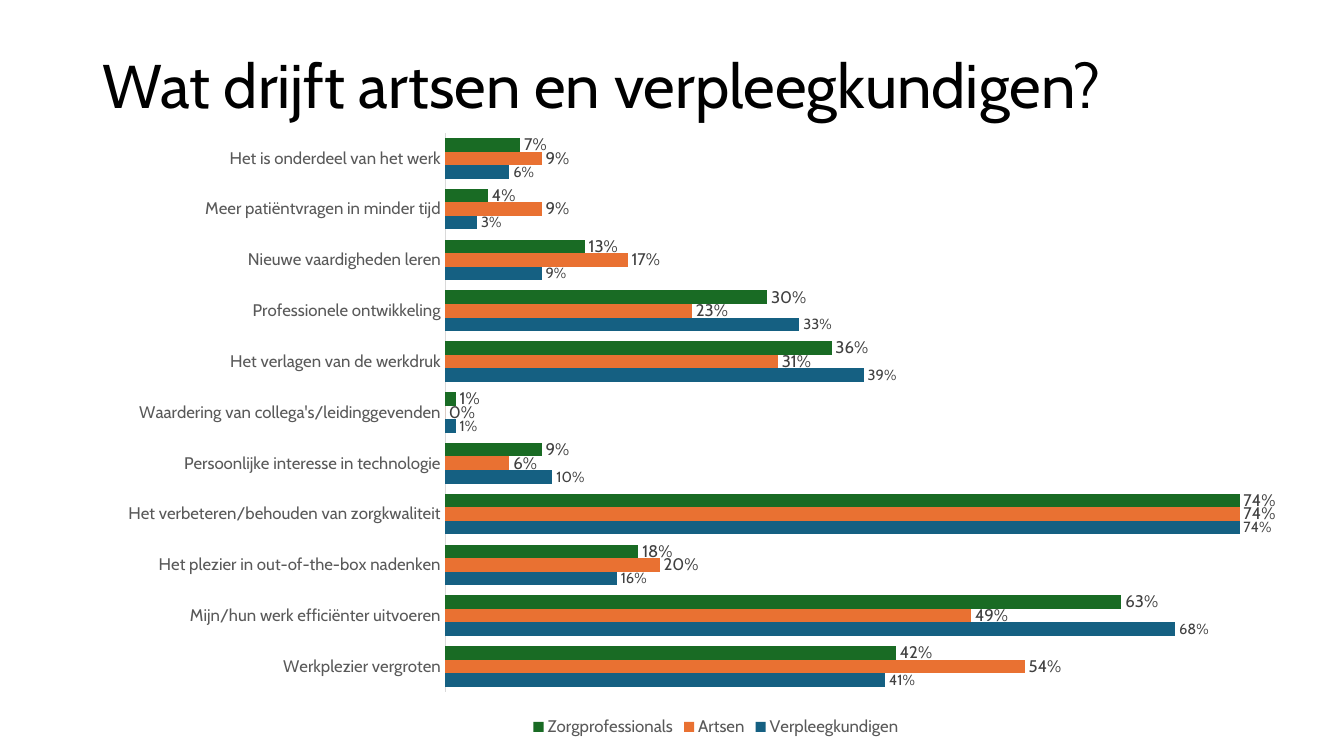
import pptx
import pptx.chart.data
import pptx.dml.color
import pptx.enum.chart
import pptx.enum.text
import pptx.util
from pptx.oxml import parse_xml
from pptx.oxml.ns import nsdecls

EMU_PER_PX = 914400 / 100.8
FONT = "Cabin"

# Motives from bottom to top: Verpleegkundigen, Artsen, Zorgprofessionals
GROUPS = [
    ("Verpleegkundigen", "156082", 10.5),
    ("Artsen", "E97132", 12),
    ("Zorgprofessionals", "196B24", 12),
]
MOTIVES = [
    ("Werkplezier vergroten", 0.41, 0.54, 0.42),
    ("Mijn/hun werk efficiënter uitvoeren", 0.68, 0.49, 0.63),
    ("Het plezier in out-of-the-box nadenken", 0.16, 0.2, 0.18),
    ("Het verbeteren/behouden van zorgkwaliteit", 0.74, 0.74, 0.74),
    ("Persoonlijke interesse in technologie", 0.1, 0.06, 0.09),
    ("Waardering van collega's/leidinggevenden", 0.01, 0, 0.01),
    ("Het verlagen van de werkdruk", 0.39, 0.31, 0.36),
    ("Professionele ontwikkeling", 0.33, 0.23, 0.3),
    ("Nieuwe vaardigheden leren", 0.09, 0.17, 0.13),
    ("Meer patiëntvragen in minder tijd", 0.03, 0.09, 0.04),
    ("Het is onderdeel van het werk", 0.06, 0.09, 0.07),
]


def px(length):
    return pptx.util.Emu(round(length * EMU_PER_PX))


def rgb(color):
    return pptx.dml.color.RGBColor.from_string(color)


class SlideBuilder:
    def __init__(self, presentation, font_name):
        self.slide = presentation.slides.add_slide(presentation.slide_layouts[6])
        self.font_name = font_name

    def style(self, font, size, color):
        font.name = self.font_name
        font.size = pptx.util.Pt(size)
        font.color.rgb = rgb(color)

    def title(self, text, left, top, width, height):
        shape = self.slide.shapes.add_textbox(*map(px, (left, top, width, height)))
        frame = shape.text_frame
        frame.word_wrap = True
        frame.vertical_anchor = pptx.enum.text.MSO_ANCHOR.MIDDLE
        paragraph = frame.paragraphs[0]
        paragraph.text = text
        paragraph.line_spacing = 0.9
        self.style(paragraph.font, 44, "000000")

    def bar_chart(self, groups, rows, box, plot_box):
        data = pptx.chart.data.CategoryChartData(number_format="0%")
        categories, *columns = zip(*rows)
        data.categories = categories
        for (name, _, _), values in zip(groups, columns):
            data.add_series(name, values)
        chart = self.slide.shapes.add_chart(
            pptx.enum.chart.XL_CHART_TYPE.BAR_CLUSTERED, *map(px, box), data
        ).chart
        chart.has_title = False
        self.style(chart.font, 10, "000000")

        # Bars and value labels
        plot = chart.plots[0]
        plot.gap_width = 75
        plot.overlap = 0
        plot.vary_by_categories = False
        for series, (_, color, label_size) in zip(plot.series, groups):
            series.format.fill.solid()
            series.format.fill.fore_color.rgb = rgb(color)
            series.invert_if_negative = False
            labels = series.data_labels
            labels.show_value = True
            labels.number_format = "0%"
            labels.number_format_is_linked = False
            labels.position = pptx.enum.chart.XL_LABEL_POSITION.OUTSIDE_END
            self.style(labels.font, label_size, "404040")

        # Axes
        no_tick = pptx.enum.chart.XL_TICK_MARK.NONE
        category_axis = chart.category_axis
        category_axis.major_tick_mark = no_tick
        category_axis.minor_tick_mark = no_tick
        category_axis.format.line.color.rgb = rgb("D9D9D9")
        category_axis.format.line.width = pptx.util.Pt(0.75)
        self.style(category_axis.tick_labels.font, 12, "595959")
        value_axis = chart.value_axis
        value_axis.minimum_scale = 0
        value_axis.maximum_scale = 0.8
        value_axis.has_major_gridlines = False
        value_axis.visible = False

        # Legend
        chart.has_legend = True
        chart.legend.position = pptx.enum.chart.XL_LEGEND_POSITION.BOTTOM
        chart.legend.include_in_layout = False
        self.style(chart.legend.font, 12, "595959")

        self.place_plot(chart, box, plot_box)

    def place_plot(self, chart, box, plot_box):
        left, top, width, height = box
        plot_left, plot_top, plot_width, plot_height = plot_box
        fractions = {
            "x": (plot_left - left) / width,
            "y": (plot_top - top) / height,
            "w": plot_width / width,
            "h": plot_height / height,
        }
        modes = "".join(f'<c:{key}Mode val="edge"/>' for key in "xy")
        sizes = "".join(f'<c:{key} val="{value:.4f}"/>' for key, value in fractions.items())
        layout = parse_xml(
            f'<c:layout {nsdecls("c")}><c:manualLayout><c:layoutTarget val="inner"/>'
            f"{modes}{sizes}</c:manualLayout></c:layout>"
        )
        plot_area = chart.plots[0]._element.getparent()
        for old_layout in plot_area.findall(layout.tag):
            plot_area.remove(old_layout)
        plot_area.insert(0, layout)


def main():
    presentation = pptx.Presentation()
    presentation.slide_width = px(1344)
    presentation.slide_height = px(756)
    builder = SlideBuilder(presentation, FONT)
    builder.title("Wat drijft artsen en verpleegkundigen?", 93, 16, 1159, 146)
    builder.bar_chart(GROUPS, MOTIVES, (104, 121, 1224, 620), (445, 133, 859, 559))
    presentation.save("out.pptx")


if __name__ == "__main__":
    main()
